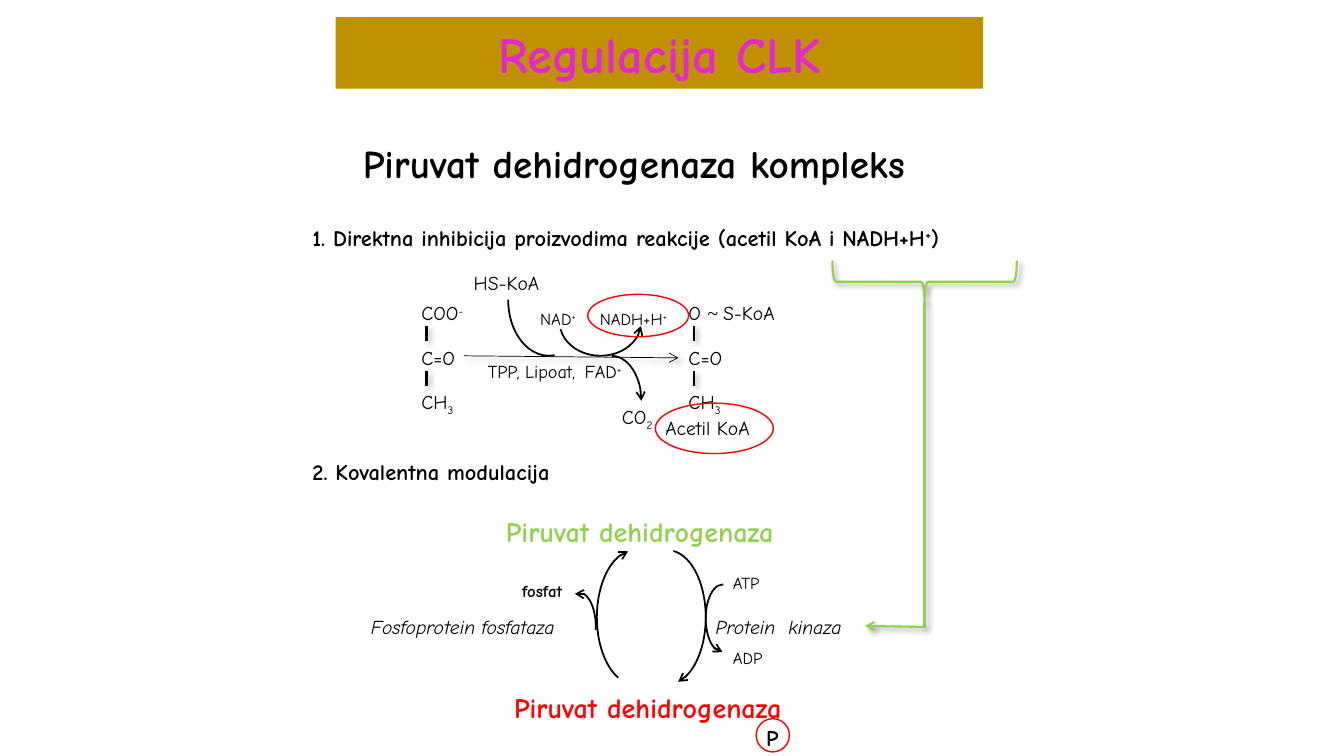
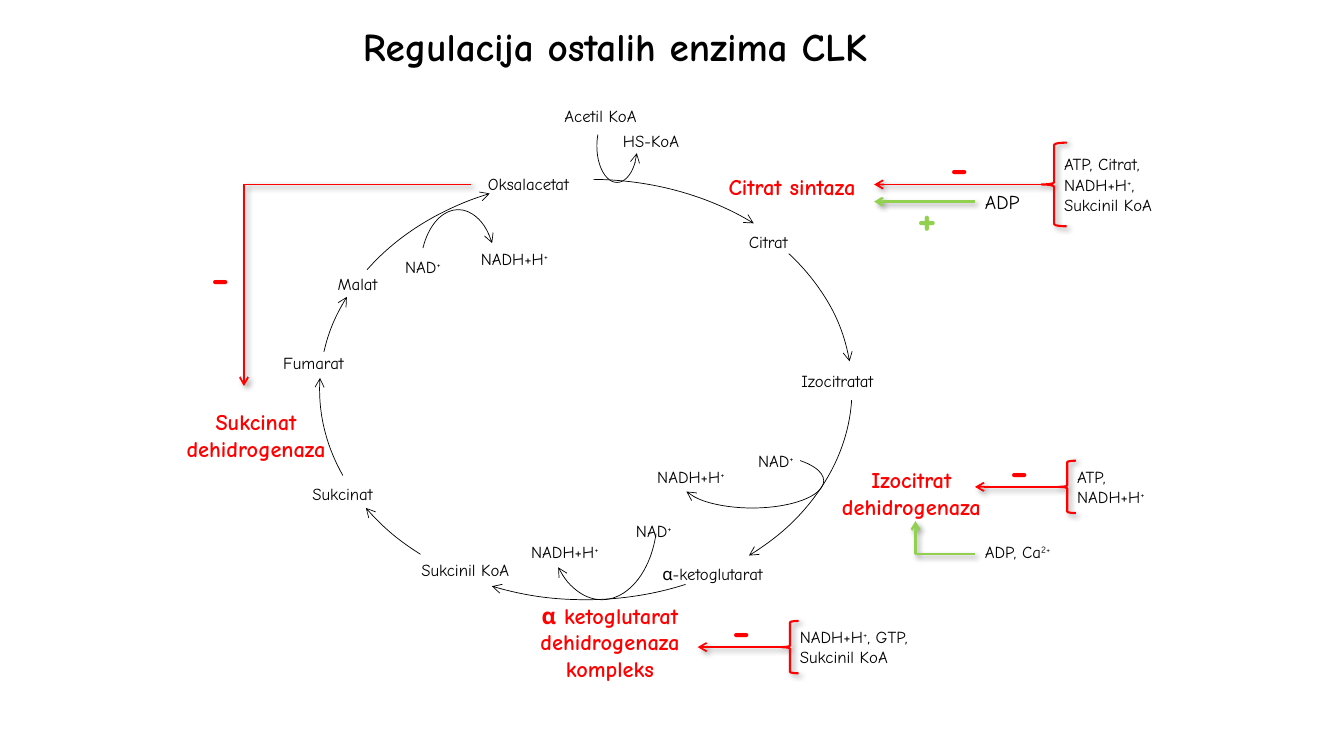
import pptx
import pptx.dml.color
import pptx.enum.shapes
import pptx.enum.text
import pptx.oxml
import pptx.oxml.ns
import pptx.util
from lxml import etree

Inches = pptx.util.Inches
RGBColor = pptx.dml.color.RGBColor
SHAPE = pptx.enum.shapes.MSO_SHAPE
ALIGN = pptx.enum.text.PP_ALIGN

GOLD = RGBColor(0xBF, 0x90, 0x00)
MAGENTA = RGBColor(0xE3, 0x29, 0xCD)
BLACK = RGBColor(0x00, 0x00, 0x00)
GREEN = RGBColor(0x92, 0xD0, 0x50)
RED = RGBColor(0xFF, 0x00, 0x00)
FONT = "Comic Neue"
TILDE_FONT = "Times New Roman"
BASELINES = {"^": "30000", "_": "-25000"}
SHADOW = (
    '<a:outerShdw xmlns:a="http://schemas.openxmlformats.org/drawingml/2006/main"'
    ' blurRad="50800" dist="38100" dir="2700000" rotWithShape="0">'
    '<a:srgbClr val="000000"><a:alpha val="40000"/></a:srgbClr></a:outerShdw>'
)


def write(frame, text, size, color, bold=False, italic=False, align=None):
    """Lines split at newlines; '|' sets off ^super, _sub and ~ parts."""
    for index, line in enumerate(text.split("\n")):
        para = frame.add_paragraph() if index else frame.paragraphs[0]
        para.alignment = align
        font = para.font
        font.name, font.size = FONT, pptx.util.Pt(size)
        font.bold, font.italic = bold, italic
        font.color.rgb = color
        for part in filter(None, line.split("|")):
            span = para.add_run()
            span.text = part.lstrip("^_")
            if part[0] in BASELINES:
                span._r.get_or_add_rPr().set("baseline", BASELINES[part[0]])
            elif part[0] == "~":
                span.font.name = TILDE_FONT


def style_line(shape, color, width, head=False, tail=False, shadow=False):
    shape.line.color.rgb = color
    shape.line.width = pptx.util.Pt(width)
    properties = shape._element.spPr
    outline = properties.find(pptx.oxml.ns.qn("a:ln"))
    for tag, wanted in (("a:headEnd", head), ("a:tailEnd", tail)):
        if wanted:
            etree.SubElement(outline, pptx.oxml.ns.qn(tag), type="arrow")
    effects = etree.SubElement(properties, pptx.oxml.ns.qn("a:effectLst"))
    if shadow:
        effects.append(pptx.oxml.parse_xml(SHADOW))


class Region:
    """Part of a page; all places are inches from its top left corner."""

    def __init__(self, page, left, top):
        self.shapes, self.left, self.top = page.shapes, left, top

    def place(self, left, top):
        return Inches(self.left + left), Inches(self.top + top)

    def text(self, left, top, width, text, size=12, color=BLACK, **look):
        height = 0.1 + size / 60 * len(text.split("\n"))
        box = self.shapes.add_textbox(
            *self.place(left, top), Inches(width), Inches(height))
        frame = box.text_frame
        frame.word_wrap = False
        frame.auto_size = pptx.enum.text.MSO_AUTO_SIZE.SHAPE_TO_FIT_TEXT
        write(frame, text, size, color, **look)

    def outline(self, kind, box, color, width, **ends):
        left, top, wide, high = box
        shape = self.shapes.add_shape(
            kind, *self.place(left, top), Inches(wide), Inches(high))
        shape.fill.background()
        style_line(shape, color, width, **ends)
        return shape

    def arc(self, box, start, end, width, **ends):
        """Clockwise arc of the ellipse in box, angles in degrees."""
        shape = self.outline(SHAPE.ARC, box, BLACK, width, **ends)
        # An adjustment unit is 100000, a degree is 60000
        shape.adjustments[0], shape.adjustments[1] = start * 0.6, end * 0.6

    def brace(self, box, color, rotation):
        shape = self.outline(SHAPE.RIGHT_BRACE, box, color, 1.5, shadow=True)
        shape.rotation = rotation

    def line(self, start, end, color, width, tail=False):
        connector = self.shapes.add_connector(
            pptx.enum.shapes.MSO_CONNECTOR.STRAIGHT,
            *self.place(*start), *self.place(*end))
        style_line(connector, color, width, tail=tail, shadow=True)

    def sign(self, left, top, text, color):
        self.text(left, top, 0.48, text, 32, color, bold=True)

    def enzyme(self, left, top, width, text):
        self.text(left, top, width, text, 16, RED, bold=True, align=ALIGN.CENTER)

    def inhibitors(self, tip, reach, brace_width, brace_height, minus, width, text):
        """Red arrow to tip from a braced list of inhibitors."""
        left, top = tip
        brace_left = left + reach
        text_height = 0.1 + 0.2 * len(text.split("\n"))
        self.line((brace_left, top), tip, RED, 1.25, tail=True)
        self.brace((brace_left, top - brace_height / 2, brace_width, brace_height),
                   RED, 180)
        self.sign(left + minus, top - 0.5, "-", RED)
        self.text(brace_left + brace_width / 2, top - text_height / 2, width, text)


def add_heading(page, top, width, text):
    Region(page, 3.5, top).text(0, 0, width, text, 28, bold=True)


def add_banner(page, left, top, text):
    banner = page.shapes.add_shape(
        SHAPE.RECTANGLE, Inches(left), Inches(top), Inches(6.42), Inches(0.71))
    banner.shadow.inherit = False
    banner.fill.solid()
    banner.fill.fore_color.rgb = GOLD
    banner.line.fill.background()
    write(banner.text_frame, text, 36, MAGENTA, bold=True, align=ALIGN.CENTER)


def add_pyruvate_reaction(page, left, top):
    region = Region(page, left, top)
    # Substrate and product chains, with bonds between their groups
    chains = ((0, 0.69, "COO|^-|"), (2.65, 1.16, "O |~ |S-KoA"))
    for chain_left, head_width, head in chains:
        groups = ((head_width, head), (0.58, "C=O"), (0.55, "CH|_3|"))
        for row, (width, group) in enumerate(groups):
            region.text(chain_left, 0.3 + 0.44 * row, width, group, 14)
        for bond_top in (0.59, 1.04):
            bond_left = chain_left + 0.15
            region.line((bond_left, bond_top), (bond_left, bond_top + 0.15),
                        BLACK, 1.5)
    # Coenzymes and by-products
    for text_left, text_top, width, text, size in (
            (0.52, 0, 0.94, "HS-KoA", 14),
            (1.18, 0.37, 0.64, "NAD|^+|", 12),
            (1.77, 0.37, 0.98, "NADH+H|^+|", 12),
            (0.66, 0.89, 0.57, "TPP,", 13),
            (1.03, 0.89, 0.78, "Lipoat,", 13),
            (1.62, 0.89, 0.64, "FAD|^+|", 13),
            (1.99, 1.33, 0.6, "CO|_2|", 14),
            (2.42, 1.44, 1.18, "Acetil KoA", 14)):
        region.text(text_left, text_top, width, text, size)
    # Reaction arrow and the curves that meet it
    region.line((0.52, 0.89), (2.65, 0.91), BLACK, 0.5, tail=True)
    region.arc((1.47, 0.22, 0.81, 0.67), 5.5, 169.9, 1.25, head=True)
    region.arc((0.96, -0.22, 0.81, 1.11), 84.2, 180.2, 1.25)
    region.arc((1.69, 0.89, 0.59, 0.89), 270.3, 0.3, 1.25, tail=True)
    # Rings round the inhibiting products
    for ring in ((1.75, 0.28, 1, 0.42), (2.42, 1.36, 1.17, 0.5)):
        region.outline(SHAPE.OVAL, ring, RED, 1)


def add_covalent_cycle(page, left, top):
    region = Region(page, left, top)
    # Active and phosphorylated enzyme
    region.text(1.34, 0, 3.18, "Piruvat dehidrogenaza", 20, GREEN, bold=True)
    region.text(1.42, 1.75, 3.18, "Piruvat dehidrogenaza", 20, RED, bold=True)
    region.outline(SHAPE.OVAL, (3.92, 2.08, 0.33, 0.33), RED, 1)
    region.text(3.92, 2.08, 0.32, "P", 16, bold=True)
    # Cycle arrows
    region.arc((2.67, 0.41, 0.75, 1.33), 274.7, 81, 1.25, tail=True)
    region.arc((2.34, 0.41, 0.75, 1.33), 105.3, 264.3, 1.25, tail=True)
    region.arc((2, 0.83, 0.33, 0.67), 262.5, 12.6, 1.25, head=True)
    region.arc((3.42, 0.75, 0.33, 0.67), 89.8, 271.7, 1.25, head=True)
    # Cofactors and regulating enzymes
    region.text(1.5, 0.66, 0.72, "fosfat", bold=True)
    region.text(3.59, 0.58, 0.53, "ATP")
    region.text(3.59, 1.33, 0.53, "ADP")
    region.text(3.42, 1, 1.54, "Protein  kinaza", 14, italic=True)
    region.text(0, 1, 2.34, "Fosfoprotein fosfataza", 14, italic=True)


def add_kinase_activation(page, left, top):
    region = Region(page, left, top)
    region.brace((0.71, -0.71, 0.42, 1.83), GREEN, 90)
    region.line((0.92, 0.41), (0.92, 3.64), GREEN, 1.5)
    region.line((0.92, 3.63), (0.33, 3.62), GREEN, 1.5, tail=True)


def add_citric_cycle(page, left, top):
    region = Region(page, left, top)
    # Ring arrows between the metabolites
    ring = (0.67, 0.78, 5.28, 4.17)
    for start, end in ((326.2, 353.9), (2.3, 45.5), (62.9, 115.5),
                       (135.1, 151.7), (160.5, 182.5), (188.2, 201.2),
                       (208.7, 243.9)):
        region.arc(ring, start, end, 0.5, tail=True)
    region.arc((0.72, 0.78, 5.28, 4.17), 270.7, 314.4, 0.5, tail=True)
    # Coenzyme curves
    region.arc((3.42, 0.09, 0.4, 0.72), 19.6, 211.4, 0.5, head=True)
    for box, start, end in (((4.25, 3.5, 1.42, 0.54), 337.2, 170.7),
                            ((2.92, 3.28, 1.1, 1.67), 18.5, 130.1),
                            ((1.67, 1.08, 0.75, 1.19), 211.5, 322)):
        region.arc(box, start, end, 0.5, tail=True)
    # Metabolites
    for text_left, text_top, width, text in (
            (3, 0, 1.04, "Acetil KoA"), (3.58, 0.25, 0.83, "HS-KoA"),
            (2.24, 0.67, 1.15, "Oksalacetat"), (4.83, 1.25, 0.68, "Citrat"),
            (5.35, 2.63, 1.09, "Izocitratat"),
            (3.97, 4.54, 1.35, "α-ketoglutarat"),
            (1.58, 4.5, 1.18, "Sukcinil KoA"), (0.5, 3.75, 0.88, "Sukcinat"),
            (0.21, 2.45, 0.85, "Fumarat"), (0.75, 1.67, 0.65, "Malat")):
        region.text(text_left, text_top, width, text)
    # Coenzymes
    for text_left, text_top in ((4.92, 3.42), (3.71, 4.12), (1.42, 1.5)):
        region.text(text_left, text_top, 0.64, "NAD|^+|")
    for text_left, text_top in ((3.92, 3.58), (2.67, 4.33), (2.17, 1.42)):
        region.text(text_left, text_top, 0.98, "NADH+H|^+|")


def add_citrate_synthase(page, left, top):
    region = Region(page, left, top)
    region.enzyme(0, 0.34, 1.71, "Citrat sintaza")
    region.inhibitors((1.67, 0.5), 1.66, 0.25, 0.83, 0.66, 1.2,
                      "ATP, Citrat,\nNADH+H|^+|,\nSukcinil KoA")
    region.line((2.67, 0.67), (1.67, 0.67), GREEN, 1.75, tail=True)
    region.text(2.67, 0.5, 0.59, "ADP", 14)
    region.sign(2, 0.5, "+", GREEN)


def add_isocitrate_dehydrogenase(page, left, top):
    region = Region(page, left, top)
    region.enzyme(0, 0.25, 1.74, "Izocitrat\ndehidrogenaza")
    region.inhibitors((1.5, 0.5), 0.83, 0.17, 0.52, 0.25, 0.98,
                      "ATP,\nNADH+H|^+|")
    region.line((0.91, 1.17), (0.91, 0.84), GREEN, 1.75, tail=True)
    region.line((0.91, 1.17), (1.5, 1.17), GREEN, 1.5)
    region.text(1.5, 1, 0.98, "ADP, Ca|^2+|")


def add_ketoglutarate_dehydrogenase(page, left, top):
    region = Region(page, left, top)
    region.enzyme(0, 0, 1.76, "α ketoglutarat\ndehidrogenaza\nkompleks")
    region.inhibitors((1.75, 0.5), 0.83, 0.17, 0.52, 0.25, 1.5,
                      "NADH+H|^+|, GTP,\nSukcinil KoA")


def add_succinate_dehydrogenase(page, left, top):
    region = Region(page, left, top)
    region.enzyme(0, 2.17, 1.74, "Sukcinat\ndehidrogenaza")
    region.line((0.75, 0), (0.75, 2), RED, 1.25, tail=True)
    region.line((0.75, 0), (3, 0), RED, 1.25)
    region.sign(0.33, 0.59, "-", RED)


def build_pyruvate_page(page):
    add_banner(page, 3.33, 0.17, "Regulacija CLK")
    add_heading(page, 1.33, 6.21, "Piruvat dehidrogenaza kompleks")
    points = Region(page, 3, 2.17)
    points.text(0, 0, 7.56, "1. Direktna inhibicija proizvodima reakcije "
                "(acetil KoA i NADH+H|^+|)", 16, bold=True)
    points.text(0, 2.33, 2.89, "2. Kovalentna modulacija", 16, bold=True)
    add_pyruvate_reaction(page, 4.08, 2.64)
    add_covalent_cycle(page, 3.58, 5.05)
    add_kinase_activation(page, 8.25, 2.59)


def build_enzymes_page(page):
    add_heading(page, 0.17, 5.82, "Regulacija ostalih enzima CLK")
    add_citric_cycle(page, 2.5, 1)
    add_citrate_synthase(page, 7, 1.33)
    add_isocitrate_dehydrogenase(page, 8.17, 4.33)
    add_ketoglutarate_dehydrogenase(page, 5.17, 5.92)
    add_succinate_dehydrogenase(page, 1.67, 1.83)


def main():
    deck = pptx.Presentation()
    deck.slide_width, deck.slide_height = Inches(13.33), Inches(7.5)
    for build in (build_pyruvate_page, build_enzymes_page):
        build(deck.slides.add_slide(deck.slide_layouts[6]))
    deck.save("out.pptx")


if __name__ == "__main__":
    main()
